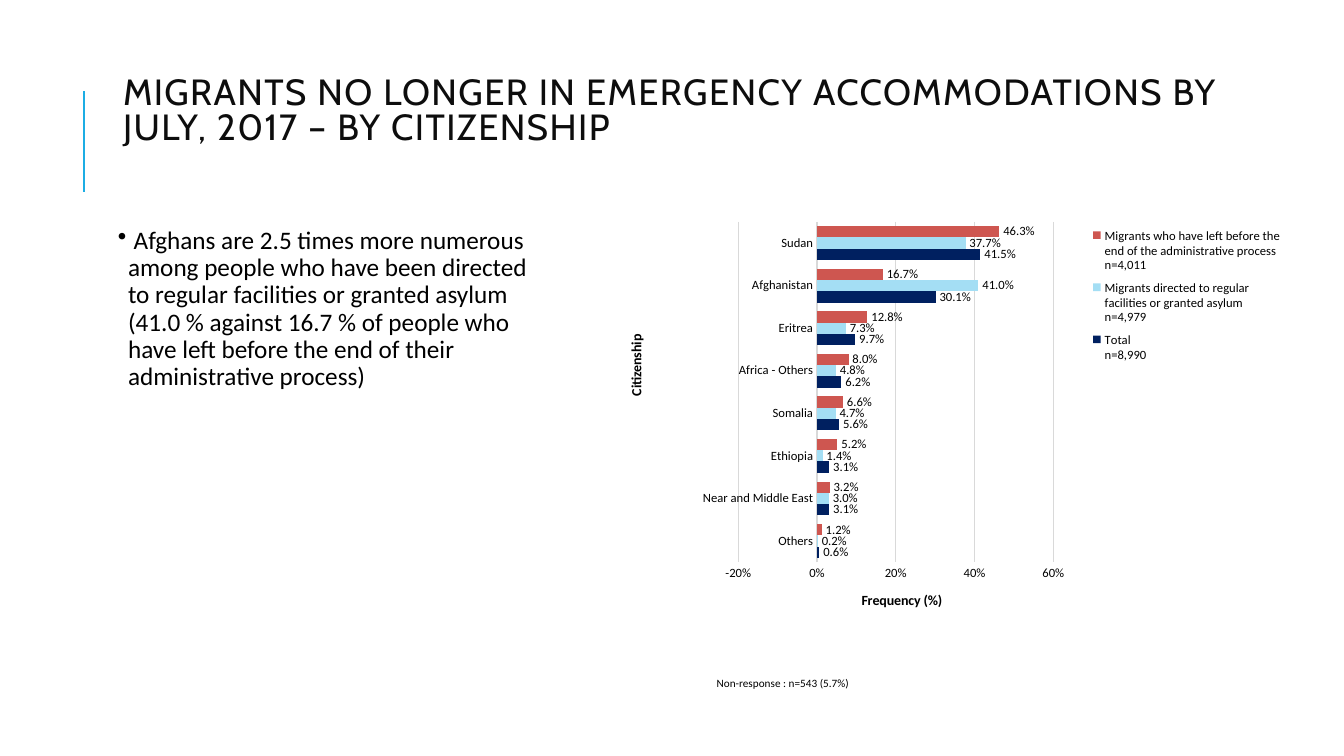
from lxml import etree
from pptx import Presentation
from pptx.chart.data import CategoryChartData
from pptx.dml.color import RGBColor
from pptx.enum.chart import XL_CHART_TYPE as ChartType
from pptx.enum.chart import XL_LABEL_POSITION as LabelPosition
from pptx.enum.chart import XL_LEGEND_POSITION as LegendPosition
from pptx.enum.chart import XL_TICK_MARK as TickMark
from pptx.enum.shapes import MSO_CONNECTOR as Connector
from pptx.enum.text import MSO_ANCHOR as Anchor
from pptx.enum.text import PP_ALIGN as Align
from pptx.oxml.ns import qn
from pptx.util import Inches, Pt

TITLE = "MIGRANTS NO LONGER IN EMERGENCY ACCOMMODATIONS BY JULY, 2017 – BY CITIZENSHIP"
FINDING = (
    " Afghans are 2.5 times more numerous among people who have been directed "
    "to regular facilities or granted asylum (41.0 % against 16.7 % of people "
    "who have left before the end of their administrative process)"
)
NON_RESPONSE = "Non-response : n=543 (5.7%)"

BLACK = RGBColor(0x00, 0x00, 0x00)
TITLE_INK = RGBColor(0x0D, 0x0D, 0x0D)
ACCENT = RGBColor(0x1C, 0xAD, 0xE4)
GRID = RGBColor(0xD9, 0xD9, 0xD9)
NAVY = RGBColor(0x00, 0x20, 0x60)
SKY = RGBColor(0xA4, 0xDE, 0xF4)
RED = RGBColor(0xCE, 0x56, 0x50)

CITIZENSHIPS = ["Others", "Near and Middle East", "Ethiopia", "Somalia",
                "Africa - Others", "Eritrea", "Afghanistan", "Sudan"]
SERIES = [
    ("Total\nn=8,990", NAVY,
     [0.006, 0.031, 0.031, 0.056, 0.062, 0.097, 0.301, 0.415]),
    ("Migrants directed to regular facilities or granted asylum\nn=4,979", SKY,
     [0.002, 0.03, 0.014, 0.047, 0.048, 0.073, 0.41, 0.377]),
    ("Migrants who have left before the end of the administrative process\nn=4,011", RED,
     [0.012, 0.032, 0.052, 0.066, 0.08, 0.128, 0.167, 0.463]),
]

# Left, top, width, height in inches
TITLE_BOX = (1.12, 0.64, 11.18, 0.96)
FINDING_BOX = (1.12, 2.21, 4.29, 4)
NOTE_BOX = (7.01, 6.66, 3.54, 0.42)
CHART_BOX = (5.92, 1.98, 6.84, 4.24)
# Shares of the chart's size
PLOT_SHARES = {"x": 0.205, "y": 0.052, "w": 0.457, "h": 0.797}
LEGEND_SHARES = {"x": 0.71, "y": 0.05, "w": 0.29, "h": 0.35}
CITIZENSHIP_SHARES = {"x": 0.04, "y": 0.31}
FREQUENCY_SHARES = {"x": 0.38, "y": 0.91}


def inches(box):
    return [Inches(length) for length in box]


def set_font(font, size, color=BLACK, name="Calibri", bold=False):
    font.name, font.size, font.bold = name, Pt(size), bold
    font.color.rgb = color


def add_text(slide, box, text, size):
    shape = slide.shapes.add_textbox(*inches(box))
    shape.text_frame.word_wrap = True
    paragraph = shape.text_frame.paragraphs[0]
    paragraph.text = text
    set_font(paragraph.font, size)
    return shape.text_frame, paragraph


def place(parent, shares, before, inner=False):
    """Give a chart part a manual layout, ahead of the named child elements."""
    for old in parent.findall(qn("c:layout")):
        parent.remove(old)
    layout = etree.Element(qn("c:layout"))
    manual = etree.SubElement(layout, qn("c:manualLayout"))
    if inner:
        etree.SubElement(manual, qn("c:layoutTarget")).set("val", "inner")
    for key in "xy":
        etree.SubElement(manual, qn(f"c:{key}Mode")).set("val", "edge")
    for key, share in shares.items():
        etree.SubElement(manual, qn(f"c:{key}")).set("val", str(share))
    follower = next(child for child in parent if child.tag in [qn(tag) for tag in before])
    follower.addprevious(layout)


def format_axis(axis, title, shares):
    axis.major_tick_mark = axis.minor_tick_mark = TickMark.NONE
    set_font(axis.tick_labels.font, 9)
    frame = axis.axis_title.text_frame
    frame.text = title
    set_font(frame.paragraphs[0].font, 10, bold=True)
    place(axis.axis_title._element, shares, ["c:overlay"])


def add_title(slide):
    title = slide.shapes.title
    title.left, title.top, title.width, title.height = inches(TITLE_BOX)
    title.text_frame.text = TITLE
    title.text_frame.word_wrap = True
    title.text_frame.vertical_anchor = Anchor.MIDDLE
    paragraph = title.text_frame.paragraphs[0]
    paragraph.alignment = Align.LEFT
    paragraph.line_spacing = 0.8
    set_font(paragraph.font, 26, TITLE_INK, "Cabin")
    paragraph.runs[0].font._element.set("spc", "100")
    line = slide.shapes.add_connector(Connector.STRAIGHT, *inches((0.83, 1.9, 0.83, 0.9)))
    line.line.color.rgb = ACCENT
    line.line.width = Pt(1.5)
    etree.SubElement(line._element.spPr, qn("a:effectLst"))


def add_finding(slide):
    frame, paragraph = add_text(slide, FINDING_BOX, FINDING, 18)
    frame.margin_left = frame.margin_right = Inches(0.05)
    frame.margin_top = frame.margin_bottom = Inches(0.05)
    paragraph.line_spacing = 0.9
    paragraph.space_before, paragraph.space_after = Pt(12), Pt(2)
    properties = paragraph._p.get_or_add_pPr()
    properties.set("marL", str(Inches(0.1)))
    properties.set("indent", str(-Inches(0.1)))
    bullet = etree.Element(qn("a:buChar"), char="•")
    properties.find(qn("a:defRPr")).addprevious(bullet)


def add_citizenship_chart(slide):
    data = CategoryChartData(number_format="0.0%")
    data.categories = CITIZENSHIPS
    for name, _, values in SERIES:
        data.add_series(name, values)
    chart = slide.shapes.add_chart(ChartType.BAR_CLUSTERED, *inches(CHART_BOX), data).chart
    chart.has_title = False
    set_font(chart.font, 10)

    plot = chart.plots[0]
    plot.gap_width, plot.overlap, plot.vary_by_categories = 78, 0, False
    for series, (_, color, _) in zip(plot.series, SERIES):
        series.format.fill.solid()
        series.format.fill.fore_color.rgb = color
        labels = series.data_labels
        labels.show_value = True
        labels.position = LabelPosition.OUTSIDE_END
        labels.number_format, labels.number_format_is_linked = "0.0%", False
        set_font(labels.font, 9)

    categories, values = chart.category_axis, chart.value_axis
    format_axis(categories, "Citizenship", CITIZENSHIP_SHARES)
    format_axis(values, "Frequency (%)", FREQUENCY_SHARES)
    values.minimum_scale, values.maximum_scale, values.major_unit = -0.2, 0.6, 0.2
    values.tick_labels.number_format = "0%"
    values.tick_labels.number_format_is_linked = False
    values.format.line.fill.background()
    for line in (categories.format.line, values.major_gridlines.format.line):
        line.color.rgb = GRID
        line.width = Pt(0.75)

    chart.has_legend = True
    chart.legend.position = LegendPosition.CORNER
    chart.legend.include_in_layout = False
    set_font(chart.legend.font, 9)
    place(chart.legend._element, LEGEND_SHARES, ["c:overlay", "c:txPr"])
    plot_area = chart._chartSpace.chart.plotArea
    place(plot_area, PLOT_SHARES, ["c:barChart"], inner=True)


def main():
    presentation = Presentation()
    presentation.slide_width, presentation.slide_height = Inches(13.33), Inches(7.5)
    slide = presentation.slides.add_slide(presentation.slide_layouts.get_by_name("Title Only"))
    add_title(slide)
    add_finding(slide)
    add_text(slide, NOTE_BOX, NON_RESPONSE, 8)
    add_citizenship_chart(slide)
    presentation.save("out.pptx")


if __name__ == "__main__":
    main()
